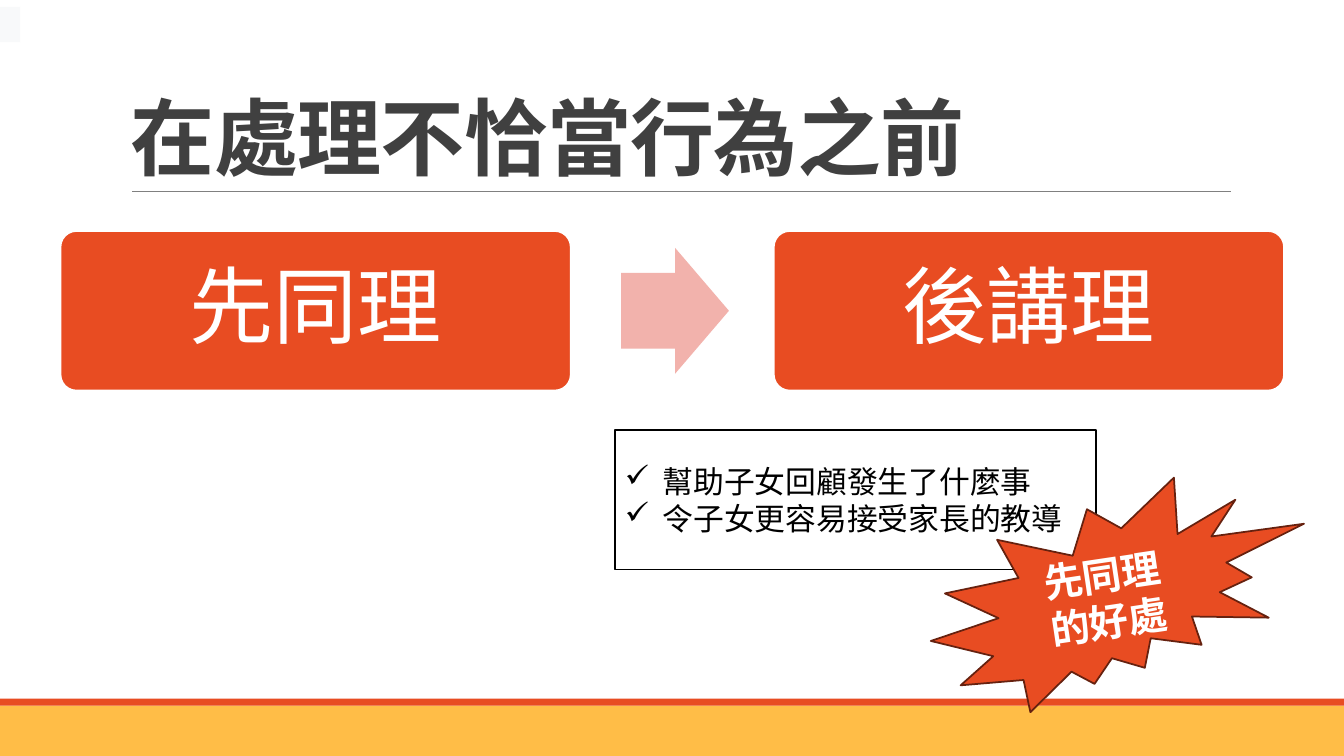
from lxml.etree import SubElement
from pptx import Presentation
from pptx.dml.color import RGBColor
from pptx.enum.shapes import MSO_CONNECTOR, MSO_SHAPE
from pptx.enum.text import MSO_ANCHOR, PP_ALIGN
from pptx.oxml.ns import qn
from pptx.util import Pt

COLORS = {
    "white": "FFFFFF", "black": "000000", "title": "404040", "rule": "808080",
    "orange": "E84C22", "amber": "FFBD47", "arrow": "F2B2AC",
    "burst_line": "66210F", "tab": "F8F9FA",
}
SANS, DISPLAY = "Noto Sans CJK SC", "League Spartan"
WIDTH, HEIGHT = 960, 540


def rgb(name):
    return RGBColor.from_string(COLORS[name])


def add_box(slide, kind, box, fill=None, line=None):
    sp = slide.shapes.add_shape(kind, *map(Pt, box))
    sp.shadow.inherit = False
    if fill:
        sp.fill.solid()
        sp.fill.fore_color.rgb = rgb(fill)
    else:
        sp.fill.background()
    if line:
        sp.line.color.rgb = rgb(line)
        sp.line.width = Pt(1.25)
    else:
        sp.line.fill.background()
    return sp


def write(sp, lines, size, color, font=SANS, bold=False,
          align=PP_ALIGN.CENTER, anchor=MSO_ANCHOR.MIDDLE):
    """Fill a shape with one paragraph per line and return the paragraphs."""
    tf = sp.text_frame
    tf.word_wrap = True
    tf.vertical_anchor = anchor
    tf.text = "\n".join(lines)
    for p in tf.paragraphs:
        p.alignment = align
        p.font.size, p.font.bold, p.font.name = Pt(size), bold, font
        p.font.color.rgb = rgb(color)
        for r in p.runs:
            # East Asian text takes its typeface from a:ea
            SubElement(r.font._element, qn("a:ea"), typeface=font)
    return tf.paragraphs


def add_footer_bands(slide, top, stripe=5):
    add_box(slide, MSO_SHAPE.RECTANGLE,
            (0, top + stripe, WIDTH, HEIGHT - top - stripe), "amber")
    add_box(slide, MSO_SHAPE.RECTANGLE, (0, top, WIDTH, stripe), "orange")


def add_title(slide, text, left, top, width, height):
    """Place a heading with a thin rule along its bottom edge."""
    bottom = top + height
    rule = slide.shapes.add_connector(
        MSO_CONNECTOR.STRAIGHT, Pt(left + 8), Pt(bottom),
        Pt(left + width + 1), Pt(bottom))
    rule.line.color.rgb = rgb("rule")
    rule.line.width = Pt(0.5)
    SubElement(rule._element.spPr, qn("a:effectLst"))
    sp = slide.shapes.add_textbox(Pt(left), Pt(top), Pt(width), Pt(height))
    p, = write(sp, [text], 60, "title", bold=True,
               align=PP_ALIGN.LEFT, anchor=MSO_ANCHOR.BOTTOM)
    p.line_spacing = 0.85
    for r in p.runs:
        r.font._element.set("spc", "-50")


def add_steps(slide, steps, left, top, width, height):
    """Place two step cards at the ends of the box and an arrow between."""
    card_w, arrow_w, arrow_h = 364.5, 77, 90
    for i, step in enumerate(steps):
        card = add_box(slide, MSO_SHAPE.ROUNDED_RECTANGLE,
                       (left + i * (width - card_w), top, card_w, height),
                       "orange", "white")
        card.adjustments[0] = 0.1
        tf = card.text_frame
        tf.margin_left = tf.margin_right = Pt(21.5)
        tf.margin_top = tf.margin_bottom = Pt(21.5)
        p, = write(card, [step], 60, "white", font=DISPLAY)
        p.line_spacing = 0.9
        p.space_after = Pt(21)
    arrow = add_box(slide, MSO_SHAPE.RIGHT_ARROW,
                    (left + (width - arrow_w) / 2 + 2,
                     top + (height - arrow_h) / 2, arrow_w, arrow_h), "arrow")
    arrow.adjustments[0] = 0.6


def add_benefits(slide, items, label, left, top, width, height):
    """Place a framed checklist with a tilted burst over its lower right corner."""
    frame = add_box(slide, MSO_SHAPE.RECTANGLE,
                    (left, top, width, height), line="black")
    for p in write(frame, items, 22, "black", align=PP_ALIGN.LEFT):
        pPr = p._p.get_or_add_pPr()
        pPr.set("marL", str(Pt(27)))
        pPr.set("indent", str(-Pt(27)))
        pPr.insert(0, pPr.makeelement(qn("a:buChar"), {"char": "✓"}))
    burst = add_box(slide, MSO_SHAPE.EXPLOSION2,
                    (left + width - 121.5, top + 40.5, 276, 150.5),
                    "orange", "burst_line")
    burst.rotation = 351.5
    write(burst, [label], 28, "white", bold=True)


def main():
    prs = Presentation()
    prs.slide_width, prs.slide_height = Pt(WIDTH), Pt(HEIGHT)
    slide = prs.slides.add_slide(prs.slide_layouts[6])
    add_footer_bands(slide, 499)
    add_title(slide, "在處理不恰當行為之前", 86.4, 22.3, 792, 114.5)
    add_steps(slide, ["先同理", "後講理"], 43.2, 165, 874, 114)
    add_box(slide, MSO_SHAPE.RECTANGLE, (0, 5, 14.4, 25.2), "tab")
    add_benefits(slide, ["幫助子女回顧發生了什麼事", "令子女更容易接受家長的教導"],
                 "先同理的好處", 439.2, 307.4, 343.5, 99.4)
    prs.save("out.pptx")


if __name__ == "__main__":
    main()
